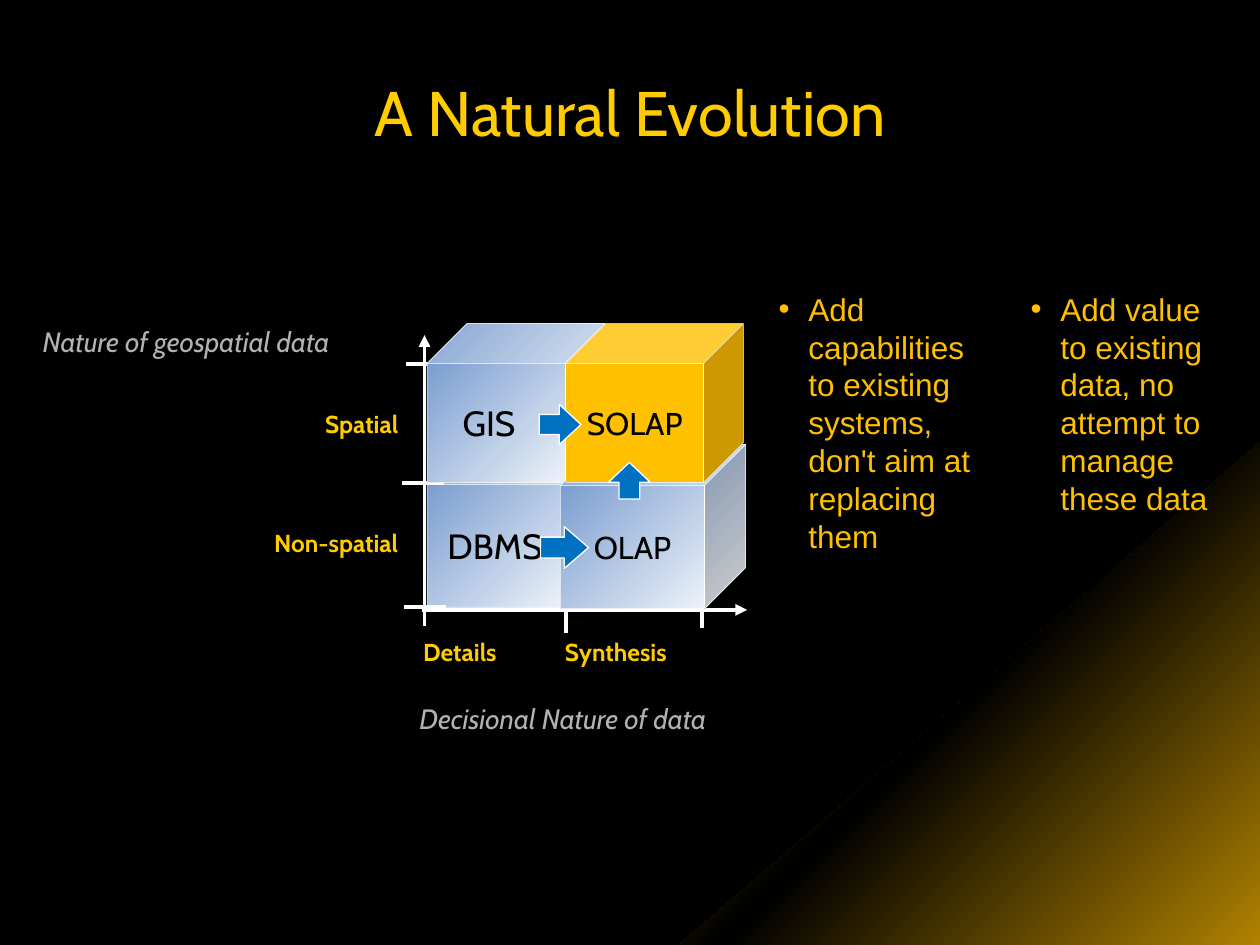
import pptx
import pptx.util
import pptx.dml.color
import pptx.enum.shapes
import pptx.enum.text
import pptx.oxml.ns
from lxml import etree

Pt = pptx.util.Pt
RGBColor = pptx.dml.color.RGBColor
SHAPE = pptx.enum.shapes.MSO_SHAPE
ALIGN = pptx.enum.text.PP_ALIGN
ANCHOR = pptx.enum.text.MSO_ANCHOR
AUTO_SIZE = pptx.enum.text.MSO_AUTO_SIZE

BLACK = RGBColor(0x00, 0x00, 0x00)
WHITE = RGBColor(0xFF, 0xFF, 0xFF)
YELLOW = RGBColor(0xFF, 0xCC, 0x00)
AMBER = RGBColor(0xFF, 0xC0, 0x00)
DARK_GOLD = RGBColor(0xB0, 0x82, 0x00)
GRAY = RGBColor(0xB2, 0xB2, 0xB2)
STEEL = RGBColor(0x69, 0x90, 0xC9)
BLUE = RGBColor(0x00, 0x70, 0xC0)

BULLET_INDENT = 17


def add_element(parent, tag, **attributes):
    element = etree.SubElement(parent, pptx.oxml.ns.qn(tag))
    for name, value in attributes.items():
        element.set(name, str(value))
    return element


def fill_shape(shape, *colors):
    """One colour fills solid; more make an evenly spaced diagonal gradient."""
    shape.shadow.inherit = False
    if len(colors) == 1:
        shape.fill.solid()
        shape.fill.fore_color.rgb = colors[0]
        return
    shape.fill.gradient()
    shape.fill.gradient_angle = 315
    stops = shape._element.spPr.find(".//" + pptx.oxml.ns.qn("a:gsLst"))
    for stop in list(stops):
        stops.remove(stop)
    for index, color in enumerate(colors):
        stop = add_element(stops, "a:gs", pos=100000 * index // (len(colors) - 1))
        add_element(stop, "a:srgbClr", val=color)


def write_text(box, lines, size, color, font="Cabin", align=ALIGN.LEFT, bold=False,
               italic=False, wrap=True, anchor=ANCHOR.TOP, inset=7.2, gap=0,
               bullet=False, tab=None):
    frame = box.text_frame
    frame.word_wrap = wrap
    frame.vertical_anchor = anchor
    frame.margin_left = Pt(inset)
    for index, line in enumerate(lines):
        para = frame.add_paragraph() if index else frame.paragraphs[0]
        properties = para._p.get_or_add_pPr()
        if bullet:
            properties.set("marL", str(Pt(BULLET_INDENT)))
            properties.set("indent", str(-Pt(BULLET_INDENT)))
            add_element(properties, "a:buFont", typeface="Arial")
            add_element(properties, "a:buChar", char="•")
        if tab:
            tabs = add_element(properties, "a:tabLst")
            add_element(tabs, "a:tab", pos=Pt(tab), algn="l")
        para.alignment = align
        if index and gap:
            para.space_before = Pt(gap)
        span = para.add_run()
        span.text = line
        span.font.name = font
        span.font.size = Pt(size)
        span.font.bold = bold
        span.font.italic = italic
        span.font.color.rgb = color


def add_text(page, left, top, width, height, lines, size, color, grow=True, **style):
    box = page.shapes.add_textbox(Pt(left), Pt(top), Pt(width), Pt(height))
    write_text(box, lines, size, color, **style)
    if grow:
        box.text_frame.auto_size = AUTO_SIZE.SHAPE_TO_FIT_TEXT


def add_line(page, start, end, arrow=False):
    line = page.shapes.add_connector(
        pptx.enum.shapes.MSO_CONNECTOR.STRAIGHT,
        Pt(start[0]), Pt(start[1]), Pt(end[0]), Pt(end[1]))
    line.line.width = Pt(2.25)
    line.line.color.rgb = WHITE
    if arrow:
        add_element(line.line._get_or_add_ln(), "a:tailEnd", type="triangle")
    add_element(line._element.spPr, "a:effectLst")


def add_cube(page, left, top, width, height, name, size, colors, **style):
    cube = page.shapes.add_shape(SHAPE.CUBE, Pt(left), Pt(top), Pt(width), Pt(height))
    cube.adjustments[0] = 0.25
    fill_shape(cube, *colors)
    cube.line.color.rgb = WHITE
    cube.line.width = Pt(0.25)
    write_text(cube, [name], size, BLACK, anchor=ANCHOR.MIDDLE, **style)


def add_arrow(page, left, top, width, height, head, rotation=0):
    arrow = page.shapes.add_shape(
        SHAPE.RIGHT_ARROW, Pt(left), Pt(top), Pt(width), Pt(height))
    arrow.adjustments[1] = head
    arrow.rotation = rotation
    fill_shape(arrow, BLUE)
    arrow.line.color.rgb = WHITE
    arrow.line.width = Pt(0.75)


def draw_corner(page, left, top, right, bottom):
    builder = page.shapes.build_freeform(Pt(right), Pt(bottom))
    builder.add_line_segments([(Pt(left), Pt(bottom)), (Pt(right), Pt(top))])
    corner = builder.convert_to_shape()
    fill_shape(corner, DARK_GOLD, BLACK, DARK_GOLD)
    corner.line.fill.background()


def draw_axes(page, left, top):
    tick = 24
    for x, y in ((-13, 162), (-12.3, 23.1), (-14.4, 90.8)):
        add_line(page, (left + x, top + y), (left + x + tick, top + y))
    for x, y in ((157, 149.8), (79.2, 152.7)):
        add_line(page, (left + x, top + y), (left + x, top + y + tick))
    add_line(page, (left - 2.9, top + 163.5), (left + 182.9, top + 163.5), arrow=True)
    add_line(page, (left - 1.5, top + 172.8), (left - 1.5, top + 6.5), arrow=True)


def draw_labels(page, left, top):
    title_style = dict(size=16, color=GRAY, italic=True, wrap=False)
    value_style = dict(size=14, color=YELLOW, bold=True, wrap=False)
    add_text(page, left - 11.5, top + 212.4, 201.6, 26.6,
             ["Decisional Nature of data"], **title_style)
    add_text(page, left - 226.8, top - 2.8, 195.1, 26.6,
             ["Nature of geospatial data"], **title_style)
    add_text(page, left - 106.6, top + 45.4, 97.2, 92.2,
             ["Spatial", "Non-spatial"], align=ALIGN.RIGHT, gap=51, **value_style)
    add_text(page, left - 9.4, top + 175.7, 168.5, 24.5,
             ["Details\tSynthesis"], tab=81, **value_style)


def draw_diagram(page, left, top):
    """Four system cubes on two axes, with arrows from simple to rich systems."""
    blend = (STEEL, WHITE)
    add_cube(page, left, top + 68.4, 102.2, 93.6, "DBMS", 20, blend, inset=11.5)
    draw_axes(page, left, top)
    draw_labels(page, left, top)
    add_cube(page, left, top, 101.5, 90.7, "GIS", 20, blend, inset=20.2)
    add_cube(page, left + 76.2, top + 69.1, 105.8, 93.6, "OLAP", 18, blend,
             align=ALIGN.CENTER)
    add_arrow(page, left + 64.8, top + 116, 27.4, 23.8, 0.58)
    add_cube(page, left + 79.2, top, 101.5, 90.7, "SOLAP", 18, (AMBER,),
             align=ALIGN.CENTER)
    add_arrow(page, left + 64.1, top + 46.1, 23.8, 23, 0.54)
    add_arrow(page, left + 105.1, top + 77.8, 20.9, 23.8, 0.54, rotation=270)


def draw_remark(page, left, top, width, height, text):
    add_text(page, left, top, width, height, [text], 18, AMBER, font="Arial", bullet=True)


def main():
    deck = pptx.Presentation()
    deck.slide_width, deck.slide_height = Pt(720), Pt(540)
    page = deck.slides.add_slide(deck.slide_layouts[6])
    page.background.fill.solid()
    page.background.fill.fore_color.rgb = BLACK

    draw_corner(page, 388.1, 252.7, 720, 540)
    add_text(page, 36, 21.6, 648, 83.5, ["A Natural Evolution"], 36, YELLOW,
             grow=False, align=ALIGN.CENTER, anchor=ANCHOR.MIDDLE)
    draw_diagram(page, 244.1, 185)
    draw_remark(page, 437.8, 162, 138.2, 138.2,
                "Add capabilities to existing systems, don't aim at replacing them")
    draw_remark(page, 581.8, 162, 126, 116.6,
                "Add value to existing data, no attempt to manage these data")
    deck.save("out.pptx")


if __name__ == "__main__":
    main()
